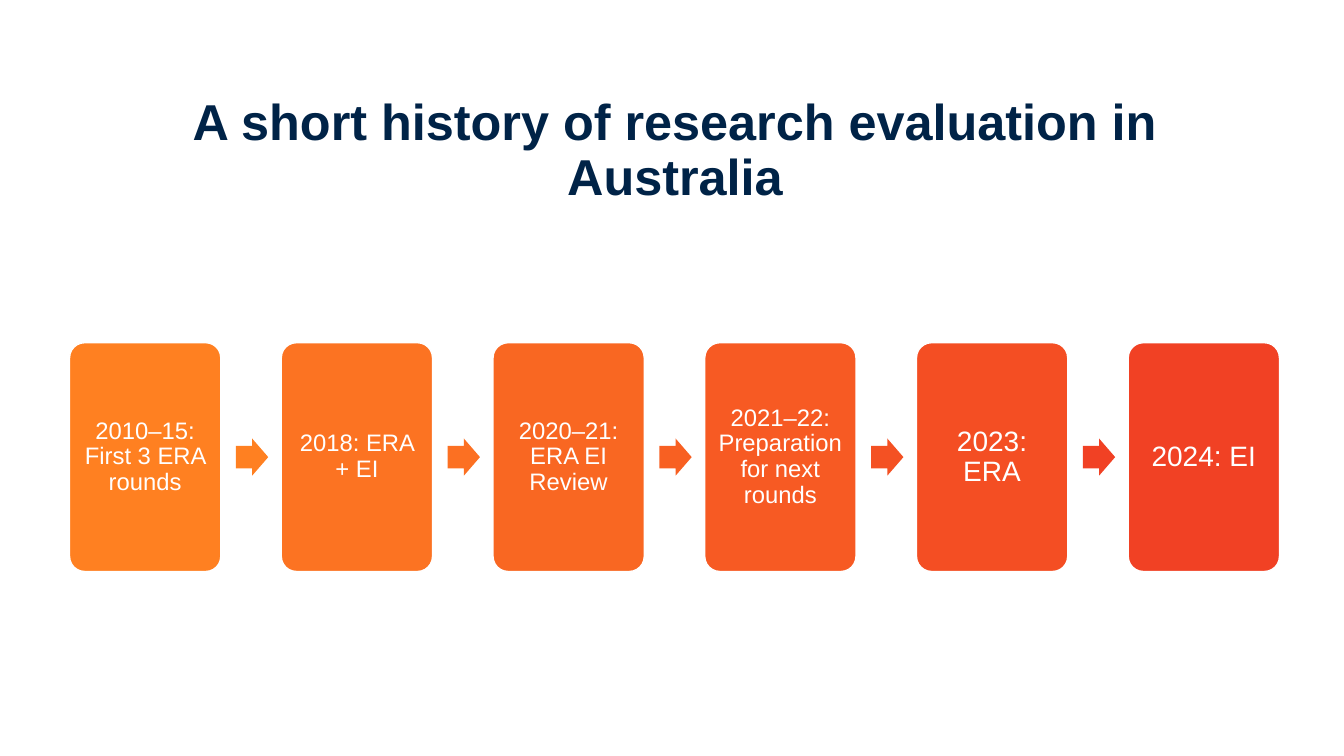
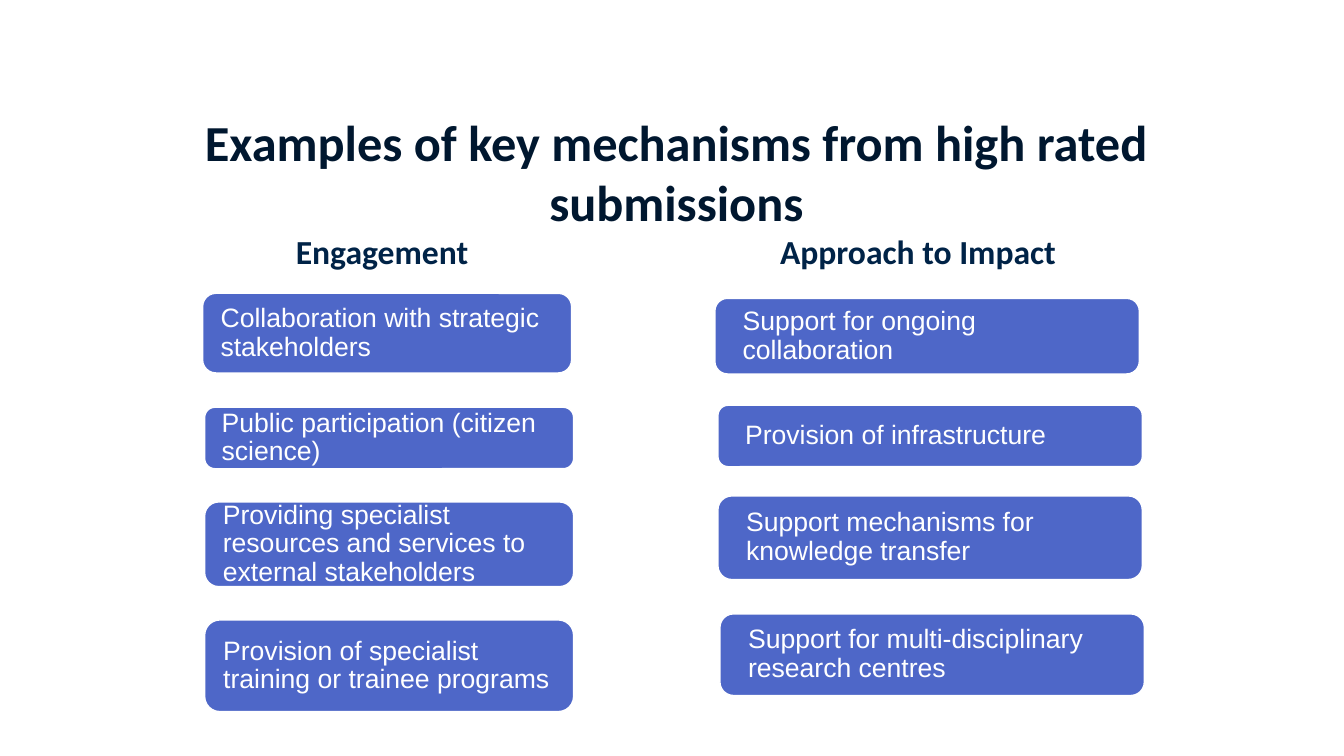
from pptx import Presentation
from pptx.dml.color import RGBColor
from pptx.enum.shapes import MSO_SHAPE
from pptx.enum.text import MSO_ANCHOR, MSO_AUTO_SIZE, PP_ALIGN
from pptx.util import Inches, Pt

COLOURS = {
    "white": "FFFFFF",
    "navy": "002347",
    "midnight": "00172F",
    "blue": "4E67C8",
    "orange": "FF8021",
    "red": "F14124",
}


def blend(start, end, share):
    pairs = zip(RGBColor.from_string(start), RGBColor.from_string(end))
    return "".join(f"{round(a + (b - a) * share):02X}" for a, b in pairs)


class Deck:
    def __init__(self):
        self.presentation = Presentation()
        self.presentation.slide_width = Inches(13.33)
        self.presentation.slide_height = Inches(7.5)
        self.slide = None

    def set_text(self, frame, text, size, colour, font="Arial", bold=False,
                 align=PP_ALIGN.CENTER, spacing=0.9, insets=(0.1, 0.05)):
        frame.text = text
        frame.word_wrap = True
        frame.auto_size = MSO_AUTO_SIZE.NONE
        frame.vertical_anchor = MSO_ANCHOR.MIDDLE
        frame.margin_left = frame.margin_right = Inches(insets[0])
        frame.margin_top = frame.margin_bottom = Inches(insets[1])
        for paragraph in frame.paragraphs:
            paragraph.alignment = align
            paragraph.line_spacing = spacing
            for run in paragraph.runs:
                run.font.name = font
                run.font.size = Pt(size)
                run.font.bold = bold
                run.font.color.rgb = RGBColor.from_string(colour)

    def titled_slide(self, text, left, top, width, height, colour, **style):
        self.slide = self.presentation.slides.add_slide(self.presentation.slide_layouts[5])
        title = self.slide.shapes.title
        title.left, title.top = Inches(left), Inches(top)
        title.width, title.height = Inches(width), Inches(height)
        self.set_text(title.text_frame, text, 36, colour, bold=True, **style)

    def heading(self, text, left, top, width, height):
        heading = self.slide.shapes.add_textbox(
            Inches(left), Inches(top), Inches(width), Inches(height))
        self.set_text(heading.text_frame, text, 24, COLOURS["navy"],
                      font="Calibri", bold=True, spacing=1.0)

    def shape(self, kind, left, top, width, height, fill):
        shape = self.slide.shapes.add_shape(
            kind, Inches(left), Inches(top), Inches(width), Inches(height))
        shape.shadow.inherit = False
        shape.fill.solid()
        shape.fill.fore_color.rgb = RGBColor.from_string(fill)
        shape.line.fill.background()
        return shape

    def card(self, text, left, top, width, height, fill, size, corner=0.16667, **style):
        card = self.shape(MSO_SHAPE.ROUNDED_RECTANGLE, left, top, width, height, fill)
        card.adjustments[0] = corner
        card.line.color.rgb = RGBColor.from_string(COLOURS["white"])
        card.line.width = Pt(1)
        self.set_text(card.text_frame, text, size, COLOURS["white"], **style)

    def arrow(self, left, top, width, height, fill):
        arrow = self.shape(MSO_SHAPE.RIGHT_ARROW, left, top, width, height, fill)
        arrow.adjustments[0] = 0.6
        arrow.adjustments[1] = 0.5


def history_slide(deck):
    deck.titled_slide("A short history of research evaluation in Australia",
                      0.91, 1.17, 11.57, 0.67, COLOURS["navy"])
    rounds = [
        ("2010–15: First 3 ERA rounds", 17),
        ("2018: ERA + EI", 17),
        ("2020–21: ERA EI Review", 17),
        ("2021–22: Preparation for next rounds", 17),
        ("2023: ERA", 20),
        ("2024: EI", 20),
    ]
    last = len(rounds) - 1
    for index, (text, size) in enumerate(rounds):
        left = 0.69 + 2.1 * index
        fill = blend(COLOURS["orange"], COLOURS["red"], index / last)
        deck.card(text, left, 3.4, 1.5, 2.27, fill, size, corner=0.1, insets=(0.07, 0.07))
        if index < last:
            fill = blend(COLOURS["orange"], COLOURS["red"], index / (last - 1))
            deck.arrow(left + 1.65, 4.35, 0.32, 0.37, fill)


def mechanisms_slide(deck):
    deck.titled_slide("Examples of key mechanisms from high rated submissions",
                      1.25, 1.1, 10.92, 1.2, COLOURS["midnight"],
                      font="Calibri", spacing=1.0)
    columns = [
        ("Engagement", 1.96, 3.66, 0.14, [
            ("Collaboration with strategic stakeholders", 2.01, 2.91, 0.79),
            ("Public participation (citizen science)", 2.03, 4.04, 0.61),
            ("Providing specialist resources and services to external stakeholders",
             2.03, 4.98, 0.84),
            ("Provision of specialist training or trainee programs", 2.03, 6.15, 0.91),
        ]),
        ("Approach to Impact", 7.0, 4.21, 0.24, [
            ("Support for ongoing collaboration", 7.09, 2.96, 0.75),
            ("Provision of infrastructure", 7.12, 4.02, 0.61),
            ("Support mechanisms for knowledge transfer", 7.12, 4.92, 0.83),
            ("Support for multi-disciplinary research centres", 7.14, 6.09, 0.81),
        ]),
    ]
    for name, heading_left, width, inset, mechanisms in columns:
        deck.heading(name, heading_left, 2.24, width, 0.5)
        for text, left, top, height in mechanisms:
            deck.card(text, left, top, width, height, COLOURS["blue"], 19,
                      align=PP_ALIGN.LEFT, insets=(inset, 0))


def main():
    deck = Deck()
    history_slide(deck)
    mechanisms_slide(deck)
    deck.presentation.save("out.pptx")


if __name__ == "__main__":
    main()
